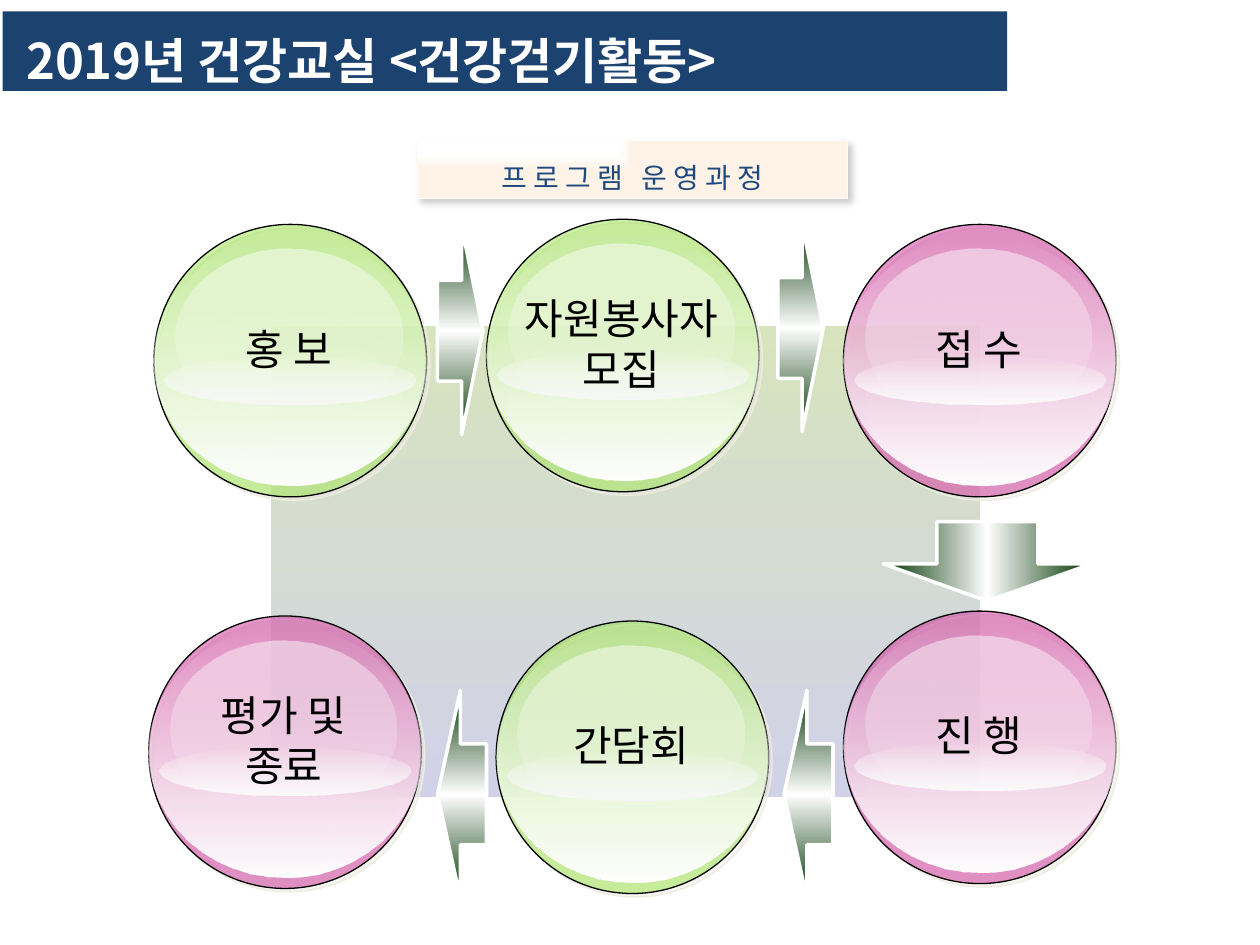
from dataclasses import dataclass

from lxml.etree import SubElement
from pptx import Presentation
from pptx.dml.color import RGBColor
from pptx.enum.shapes import MSO_SHAPE as SHAPE
from pptx.enum.text import MSO_ANCHOR as ANCHOR, PP_ALIGN as ALIGN
from pptx.oxml.ns import qn
from pptx.util import Pt


@dataclass(frozen=True)
class Theme:
    """Colours and type sizes of the slide."""
    font: str = "Noto Sans CJK KR"
    title_size: int = 28
    ball_size: int = 24
    caption_size: int = 16
    navy: str = "1C4270"
    blue: str = "1F497D"
    black: str = "000000"
    white: str = "FFFFFF"
    green: str = "99E34F"
    pink: str = "CC3399"
    green_band: str = "EBEBEB"
    pink_band: str = "F6F6F6"
    forest: str = "003300"
    panel_top: str = "D7E4BD"
    panel_end: str = "D1D1E8"
    cream: str = "FEF3E6"
    cream_line: str = "FFFCFA"
    ball_shadow: str = "EEECE1"


T = Theme()


def add_color(parent, color, alpha=100):
    """Append an RGB colour with an opacity in percent."""
    clr = SubElement(parent, qn("a:srgbClr"), val=color)
    if alpha < 100:
        SubElement(clr, qn("a:alpha"), val=str(alpha * 1000))


def set_gradient(sp, stops, from_corner=False):
    """Fill a shape from (position, colour, opacity) stops, downwards or from the top left."""
    sp.fill.background()
    old = sp._element.spPr.find(qn("a:noFill"))
    grad = SubElement(sp._element.spPr, qn("a:gradFill"), rotWithShape="1")
    sp._element.spPr.replace(old, grad)
    stop_list = SubElement(grad, qn("a:gsLst"))
    for pos, *color in stops:
        add_color(SubElement(stop_list, qn("a:gs"), pos=str(pos * 1000)), *color)
    if from_corner:
        corner = SubElement(grad, qn("a:path"), path="rect")
        SubElement(corner, qn("a:fillToRect"), r="100000", b="100000")
    else:
        SubElement(grad, qn("a:lin"), ang="5400000", scaled="0")


def add_shadow(sp, color, alpha, blur, dist):
    """Give a shape an outer shadow towards the lower right."""
    effects = sp._element.spPr.find(qn("a:effectLst"))
    shadow = SubElement(effects, qn("a:outerShdw"), blurRad=str(Pt(blur)),
                        dist=str(Pt(dist)), dir="2700000", algn="tl", rotWithShape="0")
    add_color(shadow, color, alpha)


def add_shape(slide, kind, box, color=None, alpha=100, stops=None, line=None, width=0.75):
    """Add a shape with a solid or gradient fill and an optional outline."""
    sp = slide.shapes.add_shape(kind, *map(Pt, box))
    sp.shadow.inherit = False
    if stops:
        set_gradient(sp, stops)
    else:
        sp.fill.solid()
        sp.fill.fore_color.rgb = RGBColor.from_string(color)
        clr = sp._element.spPr.find(qn("a:solidFill"))[0]
        if alpha < 100:
            SubElement(clr, qn("a:alpha"), val=str(alpha * 1000))
    if line:
        sp.line.color.rgb = RGBColor.from_string(line)
        sp.line.width = Pt(width)
    else:
        sp.line.fill.background()
    return sp


def write(sp, text, size, color, bold=False, align=ALIGN.CENTER, spacing=None, wrap=True):
    """Write vertically centred text into a shape, with line breaks at newlines."""
    tf = sp.text_frame
    tf.word_wrap = wrap
    tf.vertical_anchor = ANCHOR.MIDDLE
    p = tf.paragraphs[0]
    p.alignment = align
    if spacing:
        p.line_spacing = spacing
    for i, part in enumerate(text.split("\n")):
        if i:
            p.add_line_break()
        r = p.add_run()
        r.text = part
        r.font.size = Pt(size)
        r.font.bold = bold
        r.font.name = T.font
        r.font.color.rgb = RGBColor.from_string(color)
        SubElement(r._r.get_or_add_rPr(), qn("a:ea"), typeface=T.font)


def add_title(slide, box):
    """Add the title bar."""
    sp = add_shape(slide, SHAPE.RECTANGLE, box, T.navy)
    sp.text_frame.margin_left = Pt(13.5)
    write(sp, "2019년 건강교실 <건강걷기활동>", T.title_size, T.white,
          bold=True, align=ALIGN.LEFT, spacing=1.3)


def add_caption(slide, box):
    """Add the caption plate above the process."""
    sp = add_shape(slide, SHAPE.RECTANGLE, box, T.cream, line=T.cream_line, width=0.5)
    set_gradient(sp, [(53, T.white), (100, T.cream)], from_corner=True)
    add_shadow(sp, T.black, 20, blur=4, dist=3)
    write(sp, "프 로 그 램   운 영 과 정", T.caption_size, T.blue, spacing=1.5)


def add_ball(slide, box, label, color, band):
    """Add a glossy ball with its label, all parts scaled to the ball's box."""
    x, y, w, h = box

    def part(left, top, width, height):
        """Return a box given as fractions of the ball."""
        return x + left * w, y + top * h, width * w, height * h

    glow = [(0, T.white, 0), (100, T.green_band)]
    add_shape(slide, SHAPE.OVAL, part(0.08, 0.39, 0.83, 0.56), stops=glow)
    disc = add_shape(slide, SHAPE.OVAL, box, color, alpha=52, line=T.black)
    add_shadow(disc, T.ball_shadow, 100, blur=0, dist=2.8)
    sheens = [
        (part(0.04, 0.48, 0.92, 0.18), [(0, T.white, 0), (100, band)]),
        (part(0, 0.04, 1, 0.92), [(0, T.white, 0), (100, T.white)]),
        (part(0.08, 0.09, 0.83, 0.65), [(0, T.white, 49), (100, T.white, 0)]),
    ]
    for sheen_box, stops in sheens:
        add_shape(slide, SHAPE.OVAL, sheen_box, stops=stops)
    tb = slide.shapes.add_textbox(*map(Pt, part(0.08, 0.13, 0.83, 0.65)))
    write(tb, label, T.ball_size, T.black, wrap=False)


def add_arrow(slide, box, rotation):
    """Add a block arrow turned by the given angle."""
    stops = [(0, T.forest), (50, T.white), (100, T.forest)]
    sp = add_shape(slide, SHAPE.RIGHT_ARROW, box, stops=stops, line=T.white, width=2)
    sp.adjustments[0], sp.adjustments[1] = 0.485, 0.467
    sp.rotation = rotation


def add_process(slide, box):
    """Add the panel, the six balls and the arrows between them."""
    x, y, w, h = box
    add_shape(slide, SHAPE.RECTANGLE, box, line=T.white, width=3,
              stops=[(0, T.panel_top), (100, T.panel_end)])
    green, pink = (T.green, T.green_band), (T.pink, T.pink_band)
    balls = [
        (-65.5, -56.8, "홍 보", green),
        (328.5, -56.8, "접 수", pink),
        (124.5, -59.7, "자원봉사자\n모집", green),
        (328.5, 164.2, "진 행", pink),
        (130, 169.9, "간담회", green),
        (-68.5, 167, "평가 및 종료", pink),
    ]
    for dx, dy, label, colors in balls:
        add_ball(slide, (x + dx, y + dy, 155.7, 155.7), label, *colors)
    arrows = [
        (96.5, -55.4, 26, 0),
        (388, 76.4, 45.4, 90),
        (96.5, 209.5, 28, 180),
        (294.5, 209.5, 28, 180),
        (291, -57, 26, 0),
    ]
    for dx, dy, width, rotation in arrows:
        add_arrow(slide, (x + dx, y + dy, width, 118.8), rotation)


def main():
    """Build the slide and save it."""
    prs = Presentation()
    prs.slide_width, prs.slide_height = Pt(720), Pt(540)
    slide = prs.slides.add_slide(prs.slide_layouts[6])
    add_process(slide, (153.5, 185, 408, 272))
    add_title(slide, (1.5, 6.5, 574, 45.5))
    add_caption(slide, (238.5, 80, 246, 33.3))
    prs.save("out.pptx")


if __name__ == "__main__":
    main()
